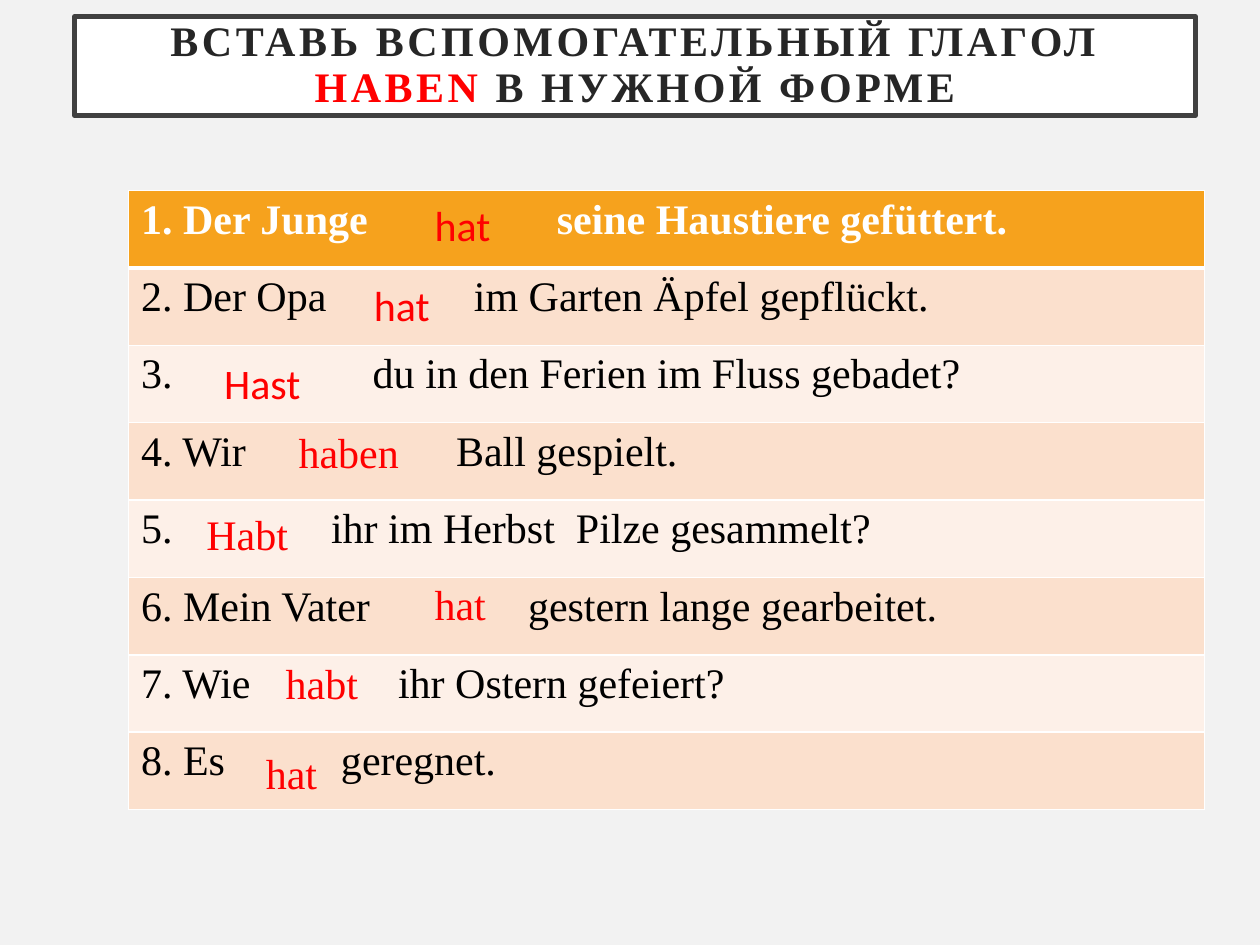
from lxml.etree import SubElement
from pptx import Presentation
from pptx.dml.color import RGBColor
from pptx.enum.text import MSO_ANCHOR, MSO_AUTO_SIZE, PP_ALIGN
from pptx.oxml import parse_xml
from pptx.oxml.ns import nsdecls, qn
from pptx.util import Cm, Pt


def color(value):
    return RGBColor.from_string(value)


def add_text(para, text, font="Times New Roman", fill="000000", bold=False, spacing=0):
    span = para.add_run()
    span.text = text
    span.font.name = font
    span.font.size = Pt(24)
    span.font.bold = bold
    span.font.color.rgb = color(fill)
    if spacing:
        span.font._element.set("spc", str(spacing * 100))


deck = Presentation()
deck.slide_width = Cm(25.4)
deck.slide_height = Cm(19.05)
page = deck.slides.add_slide(deck.slide_layouts[5])
page.background.fill.solid()
page.background.fill.fore_color.rgb = color("F2F2F2")

title = page.shapes.title
title.left, title.top, title.width, title.height = Cm(1.5), Cm(0.33), Cm(22.6), Cm(2)
title.fill.solid()
title.fill.fore_color.rgb = color("FFFFFF")
title.line.color.rgb = color("404040")
title.line.width = Pt(2.5)
frame = title.text_frame
frame.word_wrap = True
frame.auto_size = MSO_AUTO_SIZE.NONE
frame.vertical_anchor = MSO_ANCHOR.MIDDLE
frame.margin_left = frame.margin_right = frame.margin_top = frame.margin_bottom = Cm(0.5)
para = frame.paragraphs[0]
para.alignment = PP_ALIGN.CENTER
para.line_spacing = 0.9
for text, fill in (
    ("ВСТАВЬ ВСПОМОГАТЕЛЬНЫЙ ГЛАГОЛ ", "262626"),
    ("HABEN ", "FF0000"),
    ("В НУЖНОЙ ФОРМЕ", "262626"),
):
    add_text(para, text, fill=fill, bold=True, spacing=2)

sentences = [
    ("1. Der Junge", "seine Haustiere gefüttert.", 8.38),
    ("2. Der Opa", "im Garten Äpfel gepflückt.", 6.71),
    ("3.", "du in den Ferien im Fluss gebadet?", 4.67),
    ("4. Wir", "Ball gespielt.", 6.35),
    ("5.", "ihr im Herbst  Pilze gesammelt?", 3.83),
    ("6. Mein Vater", "gestern lange gearbeitet.", 7.8),
    ("7. Wie", "ihr Ostern gefeiert?", 5.18),
    ("8. Es", "geregnet.", 4.03),
]
row_height = Cm(1.56)
table = page.shapes.add_table(
    len(sentences), 1, Cm(2.59), Cm(3.84), Cm(21.69), row_height * len(sentences)
).table
for index, (start, end, tab) in enumerate(sentences):
    table.rows[index].height = row_height
    header = index == 0
    cell = table.cell(index, 0)
    cell.fill.solid()
    cell.fill.fore_color.rgb = color("F6A21D" if header else ("FDF0E8", "FBE0CD")[index % 2])
    para = cell.text_frame.paragraphs[0]
    add_text(para, f"{start}\t{end}", fill="FFFFFF" if header else "000000", bold=header)
    tabs = SubElement(para._p.get_or_add_pPr(), qn("a:tabLst"))
    SubElement(tabs, qn("a:tab"), pos=str(Cm(tab)), algn="l")
    for place, side in enumerate("LRTB"):
        thick = (index, side) in ((0, "B"), (1, "T"))
        border = parse_xml(
            f'<a:ln{side} {nsdecls("a")} w="{Pt(3 if thick else 1)}"><a:solidFill>'
            f'<a:srgbClr val="FFFFFF"/></a:solidFill></a:ln{side}>'
        )
        cell._tc.get_or_add_tcPr().insert(place, border)

answers = [
    ("hat", 8.51, 3.89, 2.39, "Calibri"),
    ("hat", 7.29, 5.51, 1.8, "Calibri"),
    ("Hast", 4.27, 7.09, 3.02, "Calibri"),
    ("haben", 5.77, 8.48, 3.94, "Times New Roman"),
    ("Habt", 3.91, 10.13, 2.39, "Times New Roman"),
    ("hat", 8.51, 11.53, 1.6, "Times New Roman"),
    ("habt", 5.51, 13.13, 2.21, "Times New Roman"),
    ("hat", 5.11, 14.94, 1.8, "Times New Roman"),
]
for text, left, top, width, font in answers:
    box = page.shapes.add_textbox(Cm(left), Cm(top), Cm(width), Cm(1.27))
    box.text_frame.word_wrap = True
    box.text_frame.auto_size = MSO_AUTO_SIZE.SHAPE_TO_FIT_TEXT
    add_text(box.text_frame.paragraphs[0], text, font=font, fill="FF0000")

deck.save("out.pptx")
